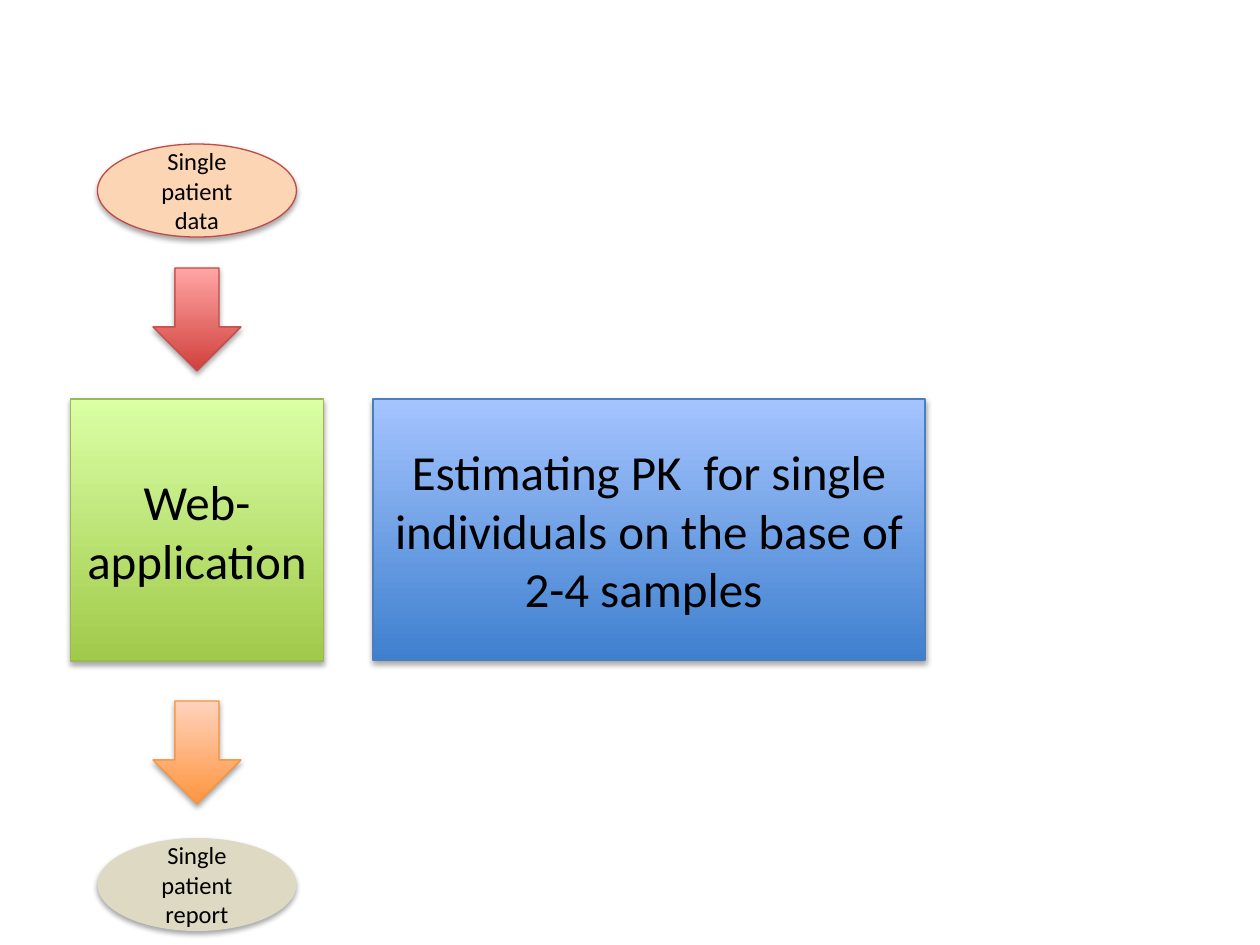
"""Build a slide showing the flow from single patient data to a report."""
import pptx
import pptx.dml.color
import pptx.enum.shapes
import pptx.enum.text
import pptx.oxml
import pptx.oxml.ns
import pptx.util

SHAPE = pptx.enum.shapes.MSO_SHAPE
PX = 914400 // 126
COLORS = {
    "text": "000000", "shadow": "000000",
    "blue_top": "A4C4FF", "blue_bottom": "3F80CE", "blue_line": "4B7EBC",
    "green_top": "DAFFA5", "green_bottom": "A0CA4A", "green_line": "98B955",
    "red_top": "FFA6A5", "red_bottom": "D1403C", "red_line": "BF4C48",
    "orange_top": "FFD2BD", "orange_bottom": "FF953E", "orange_line": "F69240",
    "peach": "FCD5B5", "tan": "DDD9C3",
}
FLOW_CENTER = 197
ESTIMATE = ("Estimating PK  for single individuals on the base of 2-4 samples ",
            SHAPE.RECTANGLE, 649, 399, 552, 261, ("blue_bottom", "blue_top"), "blue_line", 28)
FLOW = [
    ("Web-application", SHAPE.RECTANGLE, 399, 253, 262, ("green_bottom", "green_top"), "green_line", 28),
    ("", SHAPE.DOWN_ARROW, 268, 88, 103, ("red_bottom", "red_top"), "red_line", 14),
    ("Single patient report", SHAPE.OVAL, 838, 199, 93, ("tan",), None, 14),
    ("", SHAPE.DOWN_ARROW, 701, 88, 103, ("orange_bottom", "orange_top"), "orange_line", 14),
    ("Single patient data", SHAPE.OVAL, 144, 199, 93, ("peach",), "red_line", 14),
]


def rgb(name):
    return pptx.dml.color.RGBColor.from_string(COLORS[name])


def write(shape, text, *, size, color="text", font="Calibri"):
    frame = shape.text_frame
    frame.word_wrap = True
    frame.vertical_anchor = pptx.enum.text.MSO_ANCHOR.MIDDLE
    paragraph = frame.paragraphs[0]
    paragraph.alignment = pptx.enum.text.PP_ALIGN.CENTER
    run = paragraph.add_run()
    run.text = text
    run.font.name = font
    run.font.size = pptx.util.Pt(size)
    run.font.color.rgb = rgb(color)


def paint(shape, fills, line):
    if len(fills) == 2:
        shape.fill.gradient()
        shape.fill.gradient_angle = 90
        for stop, position, name in zip(shape.fill.gradient_stops, (0, 1), fills):
            stop.position = position
            stop.color.rgb = rgb(name)
    else:
        shape.fill.solid()
        shape.fill.fore_color.rgb = rgb(fills[0])
    if line:
        shape.line.color.rgb = rgb(line)
        shape.line.width = pptx.util.Pt(0.75)
    else:
        shape.line.fill.background()


def cast_shadow(shape):
    shape.shadow.inherit = False
    effects = shape._element.spPr.find(pptx.oxml.ns.qn("a:effectLst"))
    effects.append(pptx.oxml.parse_xml(
        f'<a:outerShdw {pptx.oxml.ns.nsdecls("a")} blurRad="40000" dist="23000" '
        f'dir="5400000" rotWithShape="0"><a:srgbClr val="{COLORS["shadow"]}">'
        '<a:alpha val="35000"/></a:srgbClr></a:outerShdw>'))


def add_step(slide, text, kind, center, top, width, height, fills, line, size):
    box = (center - width / 2, top, width, height)
    step = slide.shapes.add_shape(kind, *(round(length * PX) for length in box))
    paint(step, fills, line)
    cast_shadow(step)
    if text:
        write(step, text, size=size)


def main():
    deck = pptx.Presentation()
    deck.slide_width = pptx.util.Inches(10)
    deck.slide_height = pptx.util.Inches(7.5)
    slide = deck.slides.add_slide(deck.slide_layouts[6])
    add_step(slide, *ESTIMATE)
    for text, kind, *rest in FLOW:
        add_step(slide, text, kind, FLOW_CENTER, *rest)
    deck.save("out.pptx")


if __name__ == "__main__":
    main()
